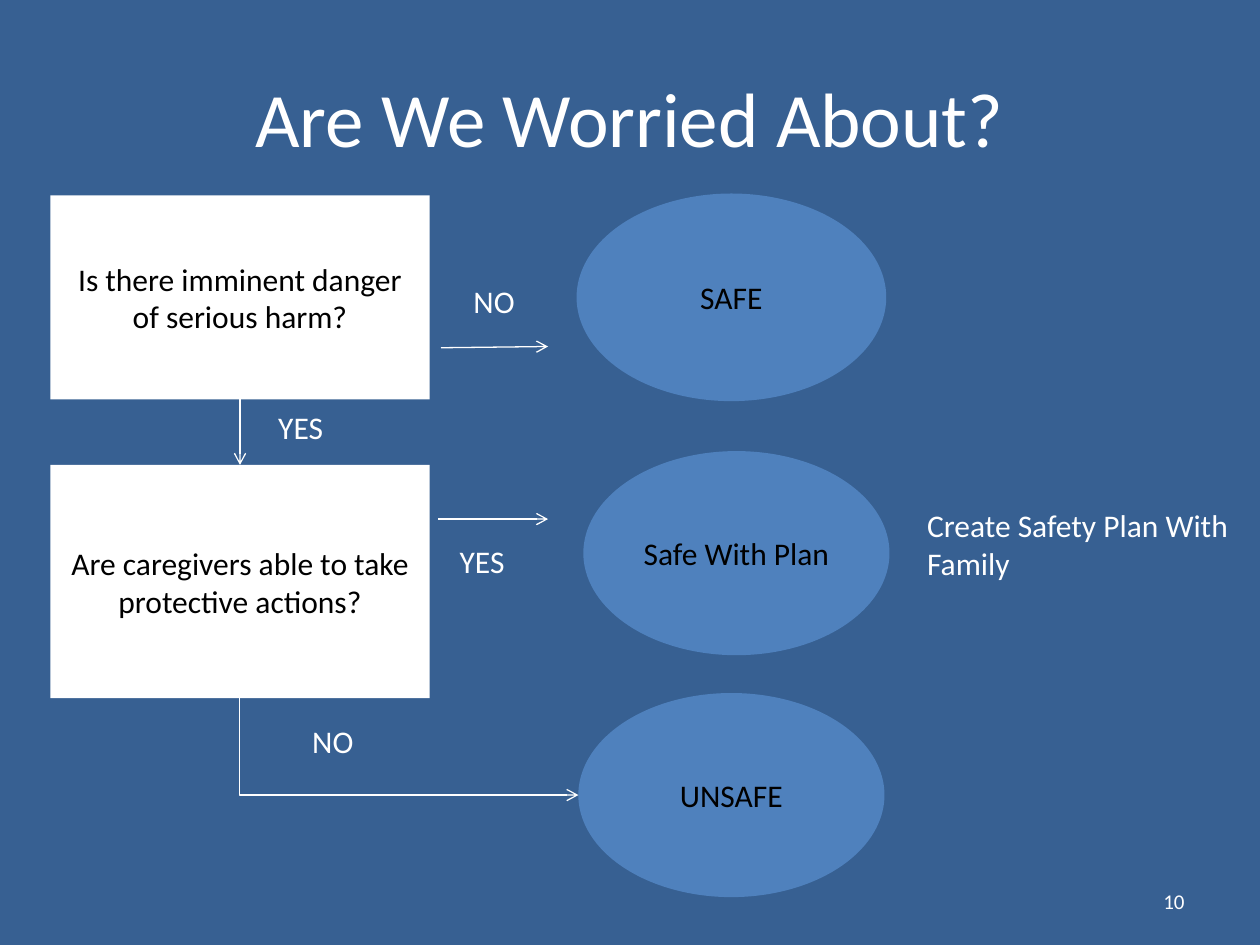
from lxml.etree import SubElement
from pptx import Presentation
from pptx.dml.color import RGBColor
from pptx.enum.shapes import MSO_CONNECTOR, MSO_SHAPE
from pptx.enum.text import MSO_ANCHOR, PP_ALIGN
from pptx.oxml.ns import qn
from pptx.util import Inches, Pt

COLORS = {"bg": "376092", "light": "FFFFFF", "dark": "000000", "oval": "4F81BD"}


def rgb(name):
    return RGBColor.from_string(COLORS[name])


def write(s, text, size, color, align, anchor):
    tf = s.text_frame
    tf.word_wrap = True
    tf.vertical_anchor = anchor
    p = tf.paragraphs[0]
    p.text = text
    p.alignment = align
    p.font.name = "Calibri"
    p.font.size = Pt(size)
    p.font.color.rgb = rgb(color)


def add_title(slide, text):
    s = slide.shapes.title
    s.left, s.top, s.width, s.height = map(Inches, (0.5, 0.3, 9, 1.25))
    write(s, text, 44, "light", PP_ALIGN.CENTER, MSO_ANCHOR.MIDDLE)


def add_node(slide, kind, text, box, fill, outlined=False):
    s = slide.shapes.add_shape(kind, *map(Inches, box))
    s.shadow.inherit = False
    s.fill.solid()
    s.fill.fore_color.rgb = rgb(fill)
    if outlined:
        s.line.color.rgb = rgb(fill)
        s.line.width = Pt(2)
    else:
        s.line.fill.background()
    write(s, text, 18, "dark", PP_ALIGN.CENTER, MSO_ANCHOR.MIDDLE)
    return s


def add_question(slide, text, top, height):
    return add_node(slide, MSO_SHAPE.RECTANGLE, text, (0.4, top, 3.01, height), "light")


def add_outcome(slide, text, left, top, outlined=False):
    return add_node(slide, MSO_SHAPE.OVAL, text, (left, top, 2.43, 1.62), "oval", outlined)


def add_label(slide, text, box, size=18, align=PP_ALIGN.LEFT, anchor=MSO_ANCHOR.TOP):
    s = slide.shapes.add_textbox(*map(Inches, box))
    write(s, text, size, "light", align, anchor)


def add_arrow(slide, start, end, kind=MSO_CONNECTOR.STRAIGHT):
    c = slide.shapes.add_connector(kind, *map(Inches, start + end))
    c.line.color.rgb = rgb("light")
    c.line.width = Pt(0.75)
    SubElement(c.line._get_or_add_ln(), qn("a:tailEnd"), type="arrow")
    SubElement(c._element.spPr, qn("a:effectLst"))
    return c


def add_corner_arrow(slide, start, end):
    """One-bend arrow that runs down, then right."""
    c = add_arrow(slide, start, end, MSO_CONNECTOR.ELBOW)
    run, drop = end[0] - start[0], end[1] - start[1]
    mid_x, mid_y = (start[0] + end[0]) / 2, (start[1] + end[1]) / 2
    # The frame is turned a quarter, so its width is the drop
    c.left, c.top = Inches(mid_x - drop / 2), Inches(mid_y - run / 2)
    c.width, c.height = Inches(drop), Inches(run)
    spPr = c._element.spPr
    spPr.find(qn("a:prstGeom")).set("prst", "bentConnector2")
    xfrm = spPr.find(qn("a:xfrm"))
    xfrm.set("rot", str(270 * 60000))
    xfrm.set("flipH", "1")


def main():
    prs = Presentation()
    prs.slide_width, prs.slide_height = Inches(10), Inches(7.5)
    slide = prs.slides.add_slide(prs.slide_layouts[5])
    slide.background.fill.solid()
    slide.background.fill.fore_color.rgb = rgb("bg")
    add_title(slide, "Are We Worried About?")

    # Questions and outcomes
    danger = add_question(slide, "Is there imminent danger of serious harm?", 1.55, 1.62)
    caregivers = add_question(
        slide, "Are caregivers able to take protective actions?", 3.69, 1.85)
    add_outcome(slide, "SAFE", 4.59, 1.55, outlined=True)
    add_outcome(slide, "Safe With Plan", 4.63, 3.58)
    add_outcome(slide, "UNSAFE", 4.59, 5.5)

    # Arrows
    add_arrow(slide, (3.5, 2.76), (4.35, 2.75))
    add_arrow(slide, (3.48, 4.12), (4.35, 4.12))
    down = add_arrow(slide, (1.9, 3.17), (1.9, 3.69))
    down.begin_connect(danger, 2)
    down.end_connect(caregivers, 0)
    add_corner_arrow(slide, (1.9, 5.54), (4.59, 6.31))

    # Answers and follow-up
    add_label(slide, "NO", (3.66, 2.19, 0.93, 0.4))
    add_label(slide, "YES", (2.11, 3.19, 1.16, 0.4))
    add_label(slide, "YES", (3.55, 4.25, 1.16, 0.4))
    add_label(slide, "NO", (2.38, 5.68, 0.93, 0.4))
    add_label(slide, "Create Safety Plan With Family", (7.26, 3.97, 2.74, 0.71))

    # Slide number
    add_label(slide, "10", (7.17, 6.95, 2.33, 0.4), 12, PP_ALIGN.RIGHT, MSO_ANCHOR.MIDDLE)

    prs.save("out.pptx")


if __name__ == "__main__":
    main()
